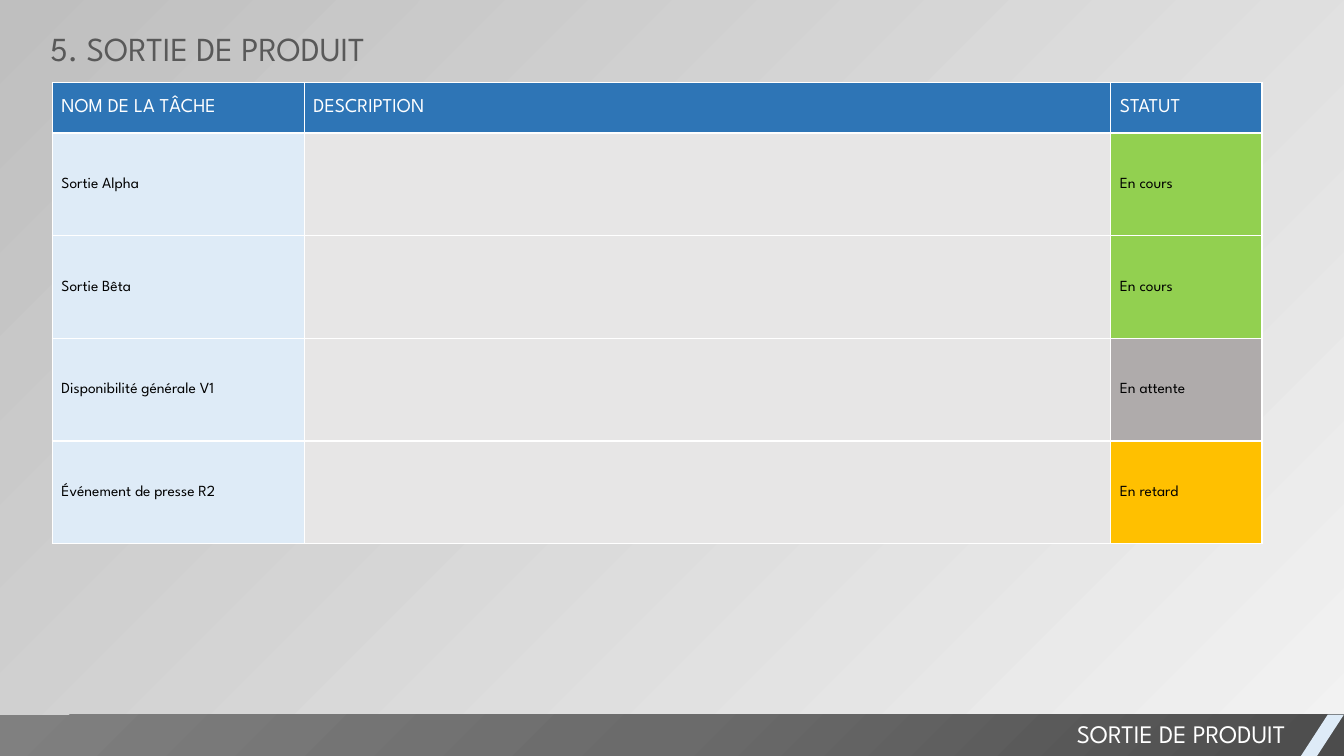
import pptx
import pptx.dml.color
import pptx.enum.shapes
import pptx.enum.text
import pptx.oxml
import pptx.oxml.ns
import pptx.util

Pt = pptx.util.Pt
qn = pptx.oxml.ns.qn
SHAPE = pptx.enum.shapes.MSO_SHAPE
ALIGN = pptx.enum.text.PP_ALIGN
ANCHOR = pptx.enum.text.MSO_ANCHOR
FIT = pptx.enum.text.MSO_AUTO_SIZE

FONT = "League Spartan"
WHITE, PALE, BLUE, GRAY = "FFFFFF", "DEEBF7", "2E75B6", "E7E6E6"
STATUS = {"En cours": "92D050", "En attente": "AFABAB", "En retard": "FFC000"}
HEADS = ["NOM DE LA TÂCHE", "DESCRIPTION", "STATUT"]
TASKS = [
    ("Sortie Alpha", "En cours"),
    ("Sortie Bêta", "En cours"),
    ("Disponibilité générale V1", "En attente"),
    ("Événement de presse R2", "En retard"),
]


def color(code):
    return pptx.dml.color.RGBColor.from_string(code)


def solid(fill, code):
    fill.solid()
    fill.fore_color.rgb = color(code)


def blend(node, stops, shade):
    """Swap the first solid fill under node for a gradient."""
    marks = ""
    for place, code, alpha in stops:
        marks += (f'<a:gs pos="{place * 1000}"><a:srgbClr val="{code}">'
                  f'<a:alpha val="{alpha * 1000}"/></a:srgbClr></a:gs>')
    grad = pptx.oxml.parse_xml(
        f'<a:gradFill {pptx.oxml.ns.nsdecls("a")} rotWithShape="1">'
        f'<a:gsLst>{marks}</a:gsLst>{shade}</a:gradFill>')
    old = next(node.iter(qn("a:solidFill")))
    old.getparent().replace(old, grad)


def write(frame, text, size, code, align=ALIGN.LEFT):
    para = frame.paragraphs[0]
    para.alignment = align
    run = para.add_run()
    run.text = text
    run.font.name = FONT
    run.font.size = Pt(size)
    run.font.color.rgb = color(code)


def label(slide, box, text, size, code, align=ALIGN.LEFT, wrap=True):
    frame = slide.shapes.add_textbox(*map(Pt, box)).text_frame
    frame.word_wrap = wrap
    frame.auto_size = FIT.SHAPE_TO_FIT_TEXT
    write(frame, text, size, code, align)


def block(slide, kind, box, code):
    shape = slide.shapes.add_shape(kind, *map(Pt, box))
    shape.shadow.inherit = False
    solid(shape.fill, code)
    shape.line.fill.background()
    return shape


def footer(slide, left, top, width, height):
    # Dark band, slanted end piece and section name
    band = block(slide, SHAPE.RECTANGLE, (left, top, width, height), "6B6B6B")
    blend(band.element.spPr,
          [(0, "4C4C4C", 100), (50, "6B6B6B", 100), (100, "808080", 100)],
          '<a:path path="circle"><a:fillToRect l="100000" t="100000"/></a:path>')
    slant = block(slide, SHAPE.PARALLELOGRAM,
                  (left + width - 31, top, 31, height), PALE)
    slant.adjustments[0] = 0.65
    label(slide, (left + width - 582, top - 0.7, 547.2, 29),
          "SORTIE DE PRODUIT", 18, WHITE, ALIGN.RIGHT)


def edge(cell):
    props = cell._tc.get_or_add_tcPr()
    for spot, side in enumerate("LRTB"):
        line = pptx.oxml.parse_xml(
            f'<a:ln{side} {pptx.oxml.ns.nsdecls("a")} w="12700"><a:solidFill>'
            f'<a:srgbClr val="{WHITE}"/></a:solidFill></a:ln{side}>')
        props.insert(spot, line)


def entry(cell, text, fill, size, code):
    solid(cell.fill, fill)
    edge(cell)
    if text:
        cell.vertical_anchor = ANCHOR.MIDDLE
        cell.margin_left = Pt(6.5)
        cell.margin_top = cell.margin_right = Pt(0.7)
        cell.margin_bottom = 0
        write(cell.text_frame, text, size, code)


def tasks(slide, left, top, width, height):
    rows = len(TASKS) + 1
    table = slide.shapes.add_table(
        rows, len(HEADS), *map(Pt, (left, top, width, height))).table
    table.first_row = table.horz_banding = False

    # Column and row sizes
    for column, share in zip(table.columns, (2.5, 8, 1.5)):
        column.width = Pt(width * share / 12)
    head = 36
    for index, row in enumerate(table.rows):
        row.height = Pt((height - head) / (rows - 1) if index else head)

    # Heading, then one row per task
    for col, text in enumerate(HEADS):
        entry(table.cell(0, col), text, BLUE, 14, WHITE)
    for row, (name, status) in enumerate(TASKS, 1):
        parts = [(name, PALE), ("", GRAY), (status, STATUS[status])]
        for col, (text, fill) in enumerate(parts):
            entry(table.cell(row, col), text, fill, 11, "000000")


def main():
    deck = pptx.Presentation()
    deck.slide_width, deck.slide_height = Pt(960), Pt(540)
    slide = deck.slides.add_slide(deck.slide_layouts[6])

    # Background
    solid(slide.background.fill, "F2F2F2")
    blend(slide.element, [(0, "F2F2F2", 40), (100, "BFBFBF", 100)],
          '<a:lin ang="13500000" scaled="0"/>')

    footer(slide, 0, 510.4, 960, 30)
    label(slide, (28.8, 16.6, 257, 36), "5. SORTIE DE PRODUIT", 24, "595959",
          wrap=False)
    tasks(slide, 37.4, 59, 864, 329.4)
    deck.save("out.pptx")


if __name__ == "__main__":
    main()
